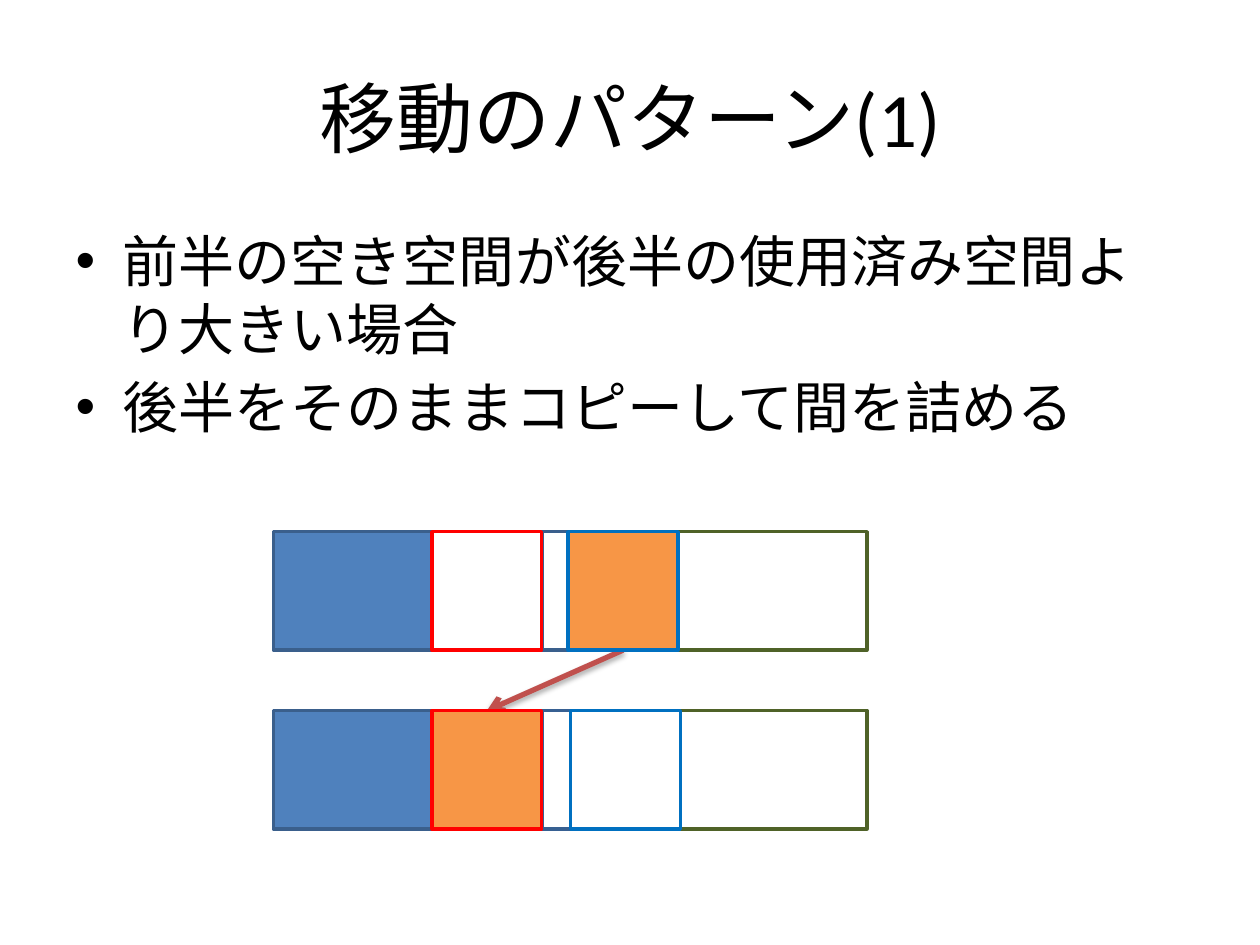
from lxml.etree import SubElement
from pptx import Presentation
from pptx.dml.color import RGBColor
from pptx.enum.shapes import MSO_CONNECTOR, MSO_SHAPE
from pptx.enum.text import MSO_ANCHOR, PP_ALIGN
from pptx.oxml import parse_xml
from pptx.oxml.ns import nsdecls, qn
from pptx.util import Inches, Pt

BLACK = RGBColor(0x00, 0x00, 0x00)
WHITE = RGBColor(0xFF, 0xFF, 0xFF)
BLUE = RGBColor(0x4F, 0x81, 0xBD)
DARK_BLUE = RGBColor(0x3A, 0x5F, 0x8C)
NAVY = RGBColor(0x37, 0x60, 0x92)
GREEN = RGBColor(0x4F, 0x62, 0x28)
RED = RGBColor(0xFF, 0x00, 0x00)
ORANGE = RGBColor(0xF7, 0x96, 0x46)
SKY = RGBColor(0x00, 0x70, 0xC0)
BRICK = RGBColor(0xC0, 0x50, 0x4D)

FONT = "Calibri"
ROW_LEFT, ROW_RIGHT, ROW_HEIGHT = 2.17, 6.88, 0.94
USED_WIDTH, BLOCK_WIDTH = 1.26, 0.87

SHADOW = (
    f'<a:effectLst {nsdecls("a")}>'
    '<a:outerShdw blurRad="40000" dist="23000" dir="5400000" rotWithShape="0">'
    '<a:srgbClr val="000000"><a:alpha val="35000"/></a:srgbClr>'
    '</a:outerShdw></a:effectLst>'
)


def fill_placeholder(holder, box, lines, size):
    """Place a placeholder in its box and write one paragraph per line."""
    holder.left, holder.top, holder.width, holder.height = map(Inches, box)
    frame = holder.text_frame
    frame.text = "\n".join(lines)
    for para in frame.paragraphs:
        para.font.name = FONT
        para.font.size = Pt(size)
        para.font.color.rgb = BLACK


def add_block(page, left, top, width, fill, outline):
    block = page.shapes.add_shape(MSO_SHAPE.RECTANGLE, Inches(left), Inches(top),
                                  Inches(width), Inches(ROW_HEIGHT))
    block.shadow.inherit = False
    block.fill.solid()
    block.fill.fore_color.rgb = fill
    block.line.color.rgb = outline
    block.line.width = Pt(2)
    return block


def add_memory_row(page, top, gap_outline, rear_left, free_left, front_fill, rear_fill):
    """Draw one memory row; return its front (red) and rear (blue) blocks."""
    front_left = ROW_LEFT + USED_WIDTH
    gap_left = front_left + BLOCK_WIDTH
    add_block(page, ROW_LEFT, top, USED_WIDTH, BLUE, DARK_BLUE)
    add_block(page, gap_left, top, rear_left - gap_left, WHITE, gap_outline)
    add_block(page, free_left, top, ROW_RIGHT - free_left, WHITE, GREEN)
    front = add_block(page, front_left, top, BLOCK_WIDTH, front_fill, RED)
    rear = add_block(page, rear_left, top, BLOCK_WIDTH, rear_fill, SKY)
    return front, rear


def add_move_arrow(page):
    """Add the arrow, whose ends are joined to the blocks later."""
    arrow = page.shapes.add_connector(MSO_CONNECTOR.STRAIGHT, 0, 0, 0, 0)
    arrow.line.color.rgb = BRICK
    arrow.line.width = Pt(3)
    SubElement(arrow.line._get_or_add_ln(), qn("a:tailEnd"), type="arrow")
    arrow._element.spPr.append(parse_xml(SHADOW))
    return arrow


def add_diagram(page, top, pitch):
    # The arrow comes first so that it lies behind the blocks
    arrow = add_move_arrow(page)
    _, source = add_memory_row(page, top, DARK_BLUE, 4.51, 5.31, WHITE, ORANGE)
    target, _ = add_memory_row(page, top + pitch, NAVY, 4.53, 5.37, ORANGE, WHITE)
    arrow.begin_connect(source, 2)
    arrow.end_connect(target, 0)


def main():
    deck = Presentation()
    deck.slide_width, deck.slide_height = Inches(10), Inches(7.5)
    page = deck.slides.add_slide(deck.slide_layouts[1])

    # Title
    title = page.shapes.title
    fill_placeholder(title, (0.5, 0.3, 9, 1.25), ["移動のパターン(1)"], 44)
    title.text_frame.vertical_anchor = MSO_ANCHOR.MIDDLE
    title.text_frame.paragraphs[0].alignment = PP_ALIGN.CENTER

    # Bullet list
    fill_placeholder(page.placeholders[1], (0.5, 1.75, 9, 4.95), [
        "前半の空き空間が後半の使用済み空間より大きい場合",
        "後半をそのままコピーして間を詰める",
    ], 32)

    # Memory before and after the move
    add_diagram(page, 4.22, 1.42)
    deck.save("out.pptx")


if __name__ == "__main__":
    main()
